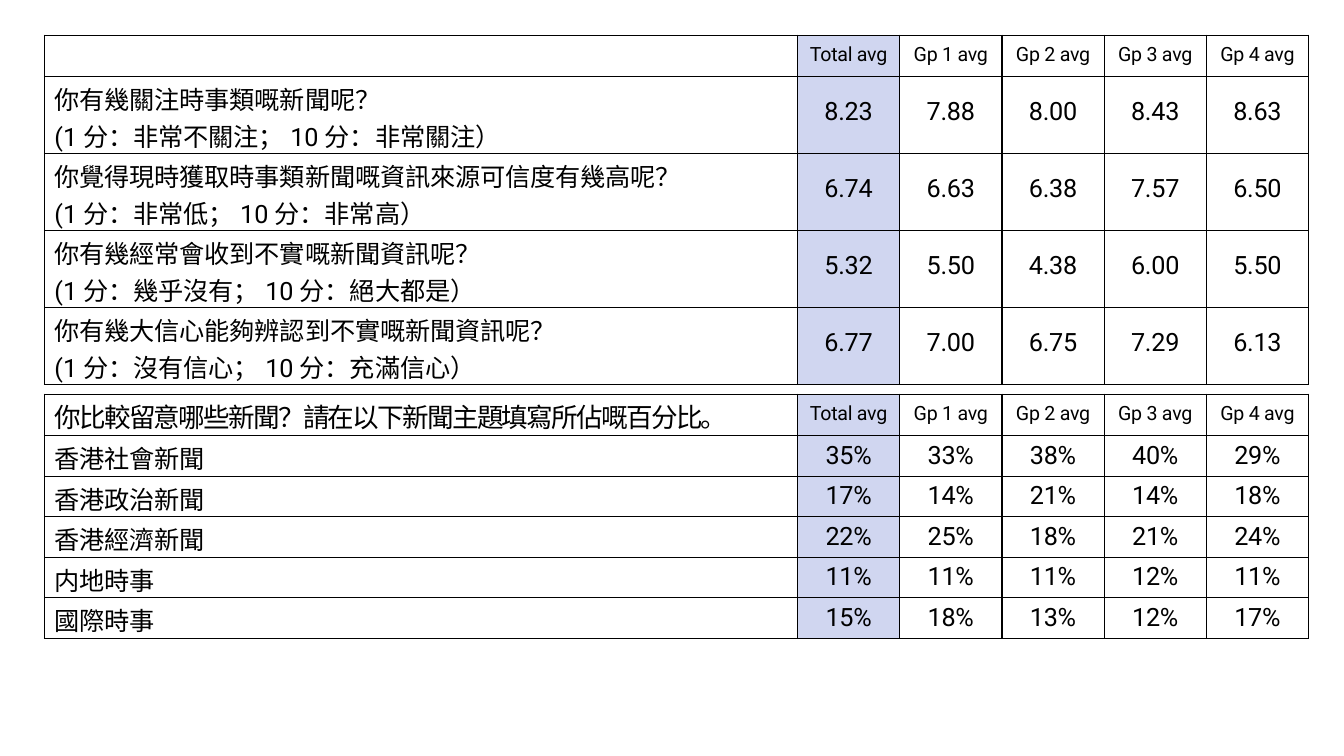
from dataclasses import dataclass
from typing import NamedTuple

from lxml.etree import SubElement as Sub
from pptx import Presentation
from pptx.dml.color import RGBColor as Rgb
from pptx.enum.text import MSO_ANCHOR as Anchor, PP_ALIGN as Align
from pptx.oxml import parse_xml as to_xml
from pptx.oxml.ns import nsdecls, qn
from pptx.util import Inches, Pt


@dataclass(frozen=True)
class Theme:
    ink: str = "000000"
    tint: str = "D0D6F0"
    latin: str = "Roboto"
    han: str = "Noto Sans CJK TC"
    body: float = 18
    lead: float = 19
    head: float = 14
    line: float = 1


class Run(NamedTuple):
    text: str
    font: str
    size: float
    gap: float


class Cell(NamedTuple):
    lines: list[list[Run]]
    top: float = 0
    indent: float = 0


class Ask(NamedTuple):
    text: str
    low: str
    high: str
    marks: str


class Topic(NamedTuple):
    text: str
    marks: str


class Grid(NamedTuple):
    top: float
    heights: list[float]
    rows: list[list[Cell]]


LOOK = Theme()

# Column grid, in inches: one wide label column, five equal score columns
WIDE, HIGH = 13.33, 7.5
LEFT, WIDTH, LABEL, SCORES = 0.44, 12.54, 7.47, 5
COLS = [LABEL] + [(WIDTH - LABEL) / SCORES] * SCORES
INDENT = 0.1
HEAD, ROW, TALL = 0.41, 0.4, 0.7

# Content
GROUPS = ["Total", "Gp 1", "Gp 2", "Gp 3", "Gp 4"]
ASKS = [
    Ask("你有幾關注時事類嘅新聞呢？", "非常不關注", "非常關注", "8.23 7.88 8.00 8.43 8.63"),
    Ask("你覺得現時獲取時事類新聞嘅資訊來源可信度有幾高呢？", "非常低", "非常高",
        "6.74 6.63 6.38 7.57 6.50"),
    Ask("你有幾經常會收到不實嘅新聞資訊呢？", "幾乎沒有", "絕大都是", "5.32 5.50 4.38 6.00 5.50"),
    Ask("你有幾大信心能夠辨認到不實嘅新聞資訊呢？", "沒有信心", "充滿信心",
        "6.77 7.00 6.75 7.29 6.13"),
]
LEAD = "你比較留意哪些新聞？請在以下新聞主題填寫所佔嘅百分比。"
TOPICS = [
    Topic("香港社會新聞", "35% 33% 38% 40% 29%"),
    Topic("香港政治新聞", "17% 14% 21% 14% 18%"),
    Topic("香港經濟新聞", "22% 25% 18% 21% 24%"),
    Topic("内地時事", "11% 11% 11% 12% 11%"),
    Topic("國際時事", "15% 18% 13% 12% 17%"),
]


def han(text: str, gap: float = -0.1, size: float = LOOK.body) -> Run:
    return Run(text, LOOK.han, size, gap)


def latin(text: str, gap: float = 0, size: float = LOOK.body) -> Run:
    return Run(text, LOOK.latin, size, gap)


def heads() -> list[Cell]:
    return [Cell([[latin(f"{name} avg", -0.2, LOOK.head)]], 0.08) for name in GROUPS]


def scores(marks: str, top: float) -> list[Cell]:
    return [Cell([[latin(mark, -0.2)]], top) for mark in marks.split()]


def ask_row(ask: Ask) -> list[Cell]:
    scale = [latin("(1 "), han(f"分：{ask.low}；"), latin(" 10 "),
             han(f"分：{ask.high}"), han("）", -0.5)]
    return [Cell([[han(ask.text)], scale], 0.04, INDENT)] + scores(ask.marks, 0.2)


def topic_row(topic: Topic) -> list[Cell]:
    return [Cell([[han(topic.text)]], 0.04, INDENT)] + scores(topic.marks, 0.05)


def put(obj: object, values: dict[str, object]) -> None:
    for name, value in values.items():
        setattr(obj, name, value)


def add_run(para, run: Run) -> None:
    part = para.add_run()
    part.text = run.text
    put(part.font, {"name": run.font, "size": Pt(run.size)})
    part.font.color.rgb = Rgb.from_string(LOOK.ink)
    props = part._r.get_or_add_rPr()
    props.set("spc", str(round(run.gap * 100)))
    Sub(props, qn("a:ea")).set("typeface", run.font)


def add_lines(box) -> None:
    """Black rule on all four sides of a table cell."""
    props = box._tc.get_or_add_tcPr()
    for spot, side in enumerate("LRTB"):
        props.insert(spot, to_xml(
            f'<a:ln{side} {nsdecls("a")} w="{Pt(LOOK.line)}"><a:solidFill>'
            f'<a:srgbClr val="{LOOK.ink}"/></a:solidFill></a:ln{side}>'))


def fill_cell(box, cell: Cell, tinted: bool) -> None:
    put(box, {"margin_left": 0, "margin_right": 0, "margin_bottom": 0,
              "margin_top": Inches(cell.top), "vertical_anchor": Anchor.TOP})
    if tinted:
        box.fill.solid()
        box.fill.fore_color.rgb = Rgb.from_string(LOOK.tint)
    else:
        box.fill.background()
    add_lines(box)
    frame = box.text_frame
    for spot, line in enumerate(cell.lines):
        para = frame.add_paragraph() if spot else frame.paragraphs[0]
        para.alignment = Align.LEFT if cell.indent else Align.CENTER
        para._p.get_or_add_pPr().set("marL", str(Inches(cell.indent)))
        for run in line:
            add_run(para, run)


def add_grid(slide, grid: Grid) -> None:
    table = slide.shapes.add_table(
        len(grid.rows), len(COLS), Inches(LEFT), Inches(grid.top),
        Inches(WIDTH), Inches(sum(grid.heights))).table
    put(table, {"first_row": False, "horz_banding": False})
    for col, width in zip(table.columns, COLS):
        col.width = Inches(width)
    for row, height, cells in zip(table.rows, grid.heights, grid.rows):
        row.height = Inches(height)
        for spot, (box, cell) in enumerate(zip(row.cells, cells)):
            fill_cell(box, cell, spot == 1)


def main() -> None:
    deck = Presentation()
    put(deck, {"slide_width": Inches(WIDE), "slide_height": Inches(HIGH)})
    slide = deck.slides.add_slide(deck.slide_layouts[6])

    # Ratings from 1 to 10
    add_grid(slide, Grid(0.35, [HEAD] + [TALL] * len(ASKS),
                         [[Cell([])] + heads()] + [ask_row(ask) for ask in ASKS]))

    # Share of attention by news topic
    lead = Cell([[han(LEAD, -1.2, LOOK.lead)]], 0.03, INDENT)
    add_grid(slide, Grid(3.91, [ROW] * (len(TOPICS) + 1),
                         [[lead] + heads()] + [topic_row(topic) for topic in TOPICS]))
    deck.save("out.pptx")


if __name__ == "__main__":
    main()
